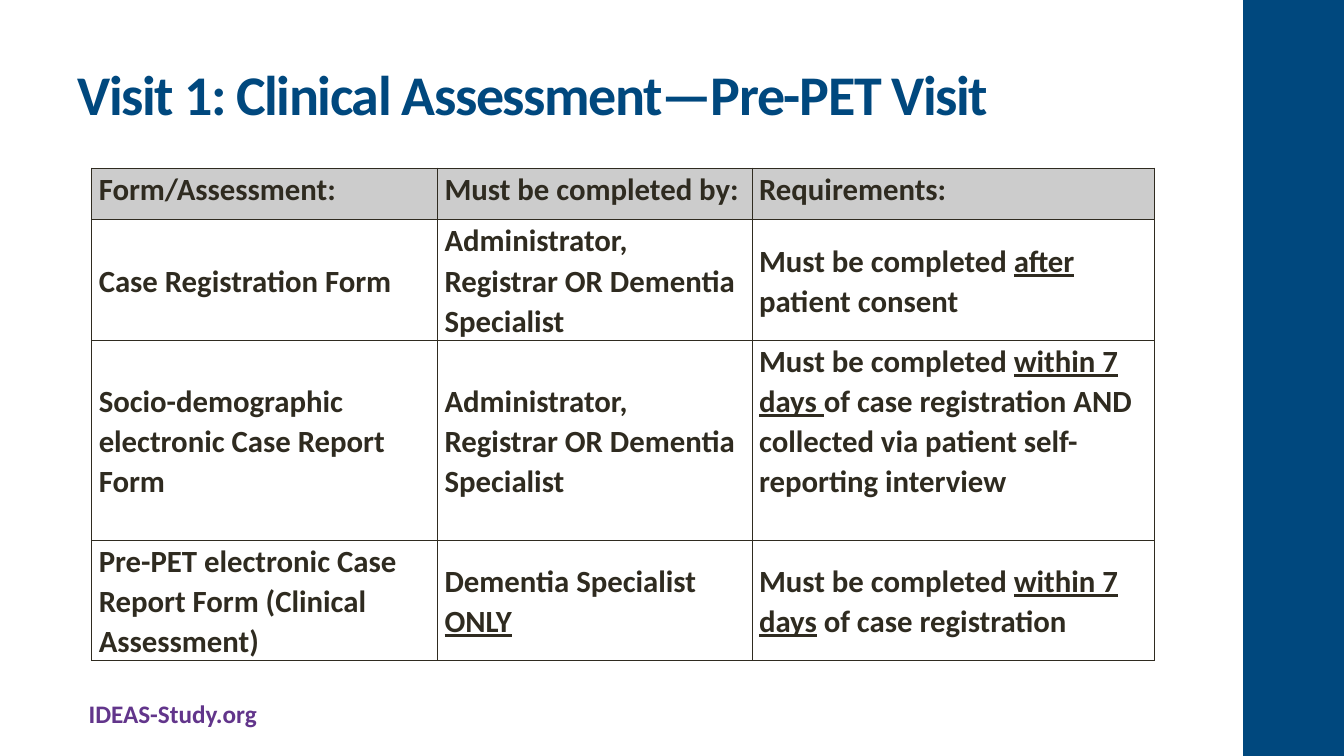
from lxml.etree import SubElement
from pptx import Presentation
from pptx.dml.color import RGBColor
from pptx.enum.shapes import MSO_SHAPE
from pptx.enum.text import MSO_ANCHOR, MSO_AUTO_SIZE
from pptx.oxml.ns import qn
from pptx.util import Inches, Pt

NAVY = RGBColor(0x00, 0x48, 0x7E)
PURPLE = RGBColor(0x62, 0x35, 0x8B)
INK = RGBColor(0x2F, 0x2B, 0x20)
GRAY = RGBColor(0xCC, 0xCC, 0xCC)

# Underscores enclose underlined words
STAFF = "Administrator, Registrar OR Dementia Specialist"
ROWS = [
    ["Form/Assessment:", "Must be completed by:", "Requirements:"],
    ["Case Registration Form", STAFF,
     "Must be completed _after_ patient consent"],
    ["Socio-demographic electronic Case Report Form", STAFF,
     "Must be completed _within 7 days _of case registration AND "
     "collected via patient self-reporting interview"],
    ["Pre-PET electronic Case Report Form (Clinical Assessment)",
     "Dementia Specialist _ONLY_",
     "Must be completed _within 7 days_ of case registration"],
]
COLUMN_WIDTHS = [3.43, 3.12, 3.99]
ROW_HEIGHTS = [0.51, 1.2, 1.98, 1.19]


def write_text(frame, text, size, color, line_spacing=None, tracking=None):
    paragraph = frame.paragraphs[0]
    paragraph.line_spacing = line_spacing
    for index, part in enumerate(text.split("_")):
        if not part:
            continue
        run = paragraph.add_run()
        run.text = part
        font = run.font
        font.name, font.size, font.bold = "Calibri", Pt(size), True
        font.color.rgb = color
        if index % 2:
            font.underline = True
        if tracking:
            run._r.get_or_add_rPr().set("spc", str(round(tracking * 100)))


def add_borders(cell, color, width):
    properties = cell._tc.get_or_add_tcPr()
    for side in ("lnL", "lnR", "lnT", "lnB"):
        line = SubElement(properties, qn(f"a:{side}"), w=str(Pt(width)))
        fill = SubElement(line, qn("a:solidFill"))
        SubElement(fill, qn("a:srgbClr"), val=str(color))


class SlideBuilder:
    def __init__(self, slide):
        self.slide = slide

    def bar(self, left, top, width, height, color):
        shape = self.slide.shapes.add_shape(
            MSO_SHAPE.RECTANGLE, *map(Inches, (left, top, width, height)))
        shape.shadow.inherit = False
        shape.fill.solid()
        shape.fill.fore_color.rgb = color
        shape.line.fill.background()

    def text(self, left, top, width, height, text, wrap=True,
             anchor=MSO_ANCHOR.TOP, **style):
        box = self.slide.shapes.add_textbox(
            *map(Inches, (left, top, width, height)))
        frame = box.text_frame
        frame.word_wrap = wrap
        frame.auto_size = MSO_AUTO_SIZE.NONE if wrap else MSO_AUTO_SIZE.SHAPE_TO_FIT_TEXT
        frame.vertical_anchor = anchor
        write_text(frame, text, **style)

    def table(self, left, top, widths, heights, rows):
        table = self.slide.shapes.add_table(
            len(rows), len(widths), Inches(left), Inches(top),
            Inches(sum(widths)), Inches(sum(heights))).table
        table.first_row = table.horz_banding = False
        for column, width in zip(table.columns, widths):
            column.width = Inches(width)
        for row_index, (row, height) in enumerate(zip(rows, heights)):
            table.rows[row_index].height = Inches(height)
            for column_index, text in enumerate(row):
                self.cell(table.cell(row_index, column_index), text,
                          header=row_index == 0)
        return table

    def cell(self, cell, text, header):
        cell.margin_left = cell.margin_right = Inches(0.07)
        cell.margin_top = cell.margin_bottom = 0
        add_borders(cell, INK, 1)
        if header:
            cell.fill.solid()
            cell.fill.fore_color.rgb = GRAY
        else:
            cell.fill.background()
            cell.vertical_anchor = MSO_ANCHOR.MIDDLE
        write_text(cell.text_frame, text, size=22, color=INK,
                   line_spacing=1.07)


def main():
    presentation = Presentation()
    presentation.slide_width = Inches(13.33)
    presentation.slide_height = Inches(7.5)
    builder = SlideBuilder(
        presentation.slides.add_slide(presentation.slide_layouts[6]))

    # Side bar and footer
    builder.bar(12.33, 0, 1, 7.5, NAVY)
    builder.text(0.78, 6.88, 1.88, 0.4, "IDEAS-Study.org", wrap=False,
                 size=18, color=PURPLE)

    # Title
    builder.text(0.67, 0.3, 11.11, 1.25,
                 "Visit 1: Clinical Assessment—Pre-PET Visit",
                 anchor=MSO_ANCHOR.MIDDLE, size=40, color=NAVY, tracking=-1)

    # Forms table; the longest requirement sits above the row's middle
    table = builder.table(0.91, 1.67, COLUMN_WIDTHS, ROW_HEIGHTS, ROWS)
    table.cell(2, 2).margin_bottom = Inches(0.39)

    presentation.save("out.pptx")


if __name__ == "__main__":
    main()
